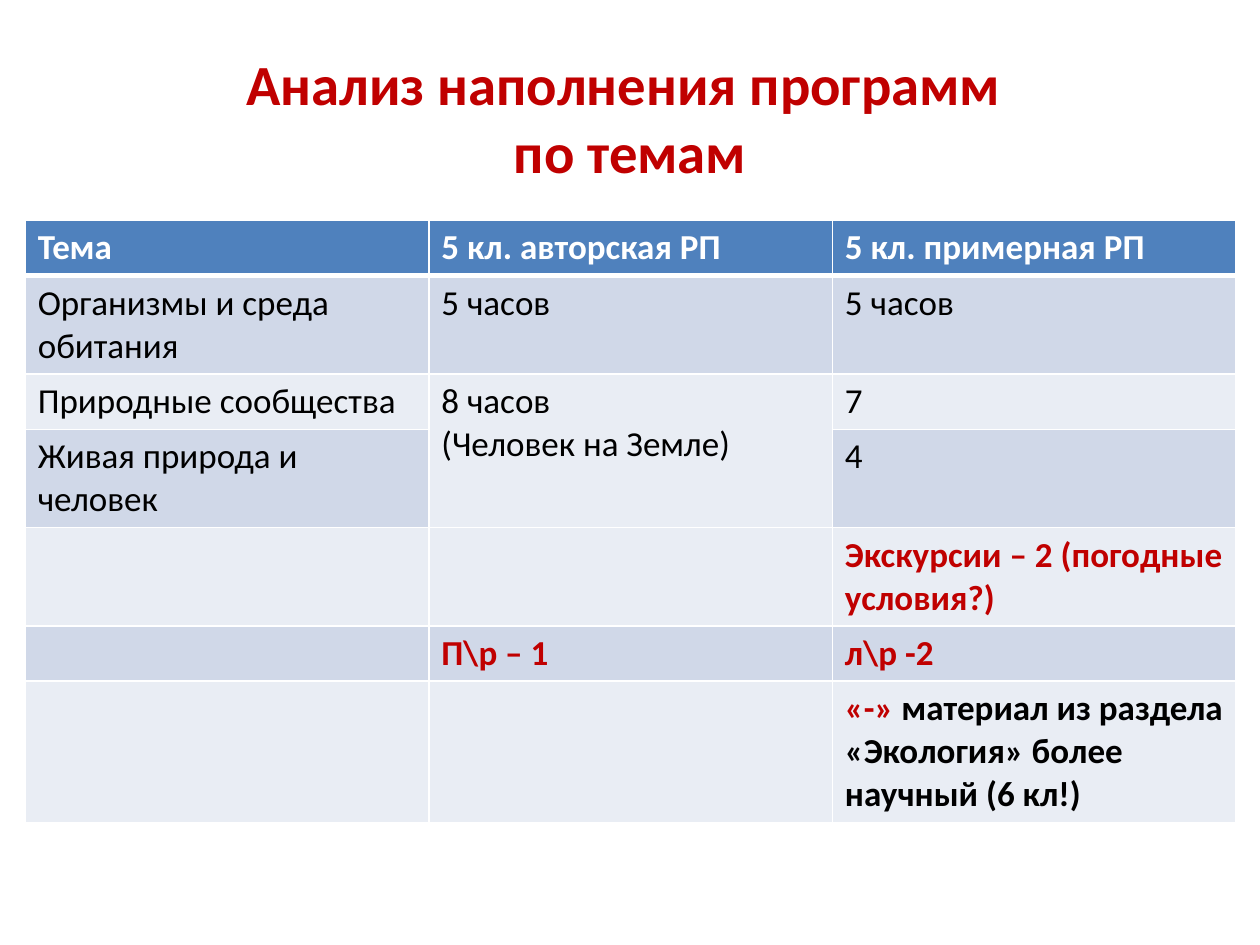
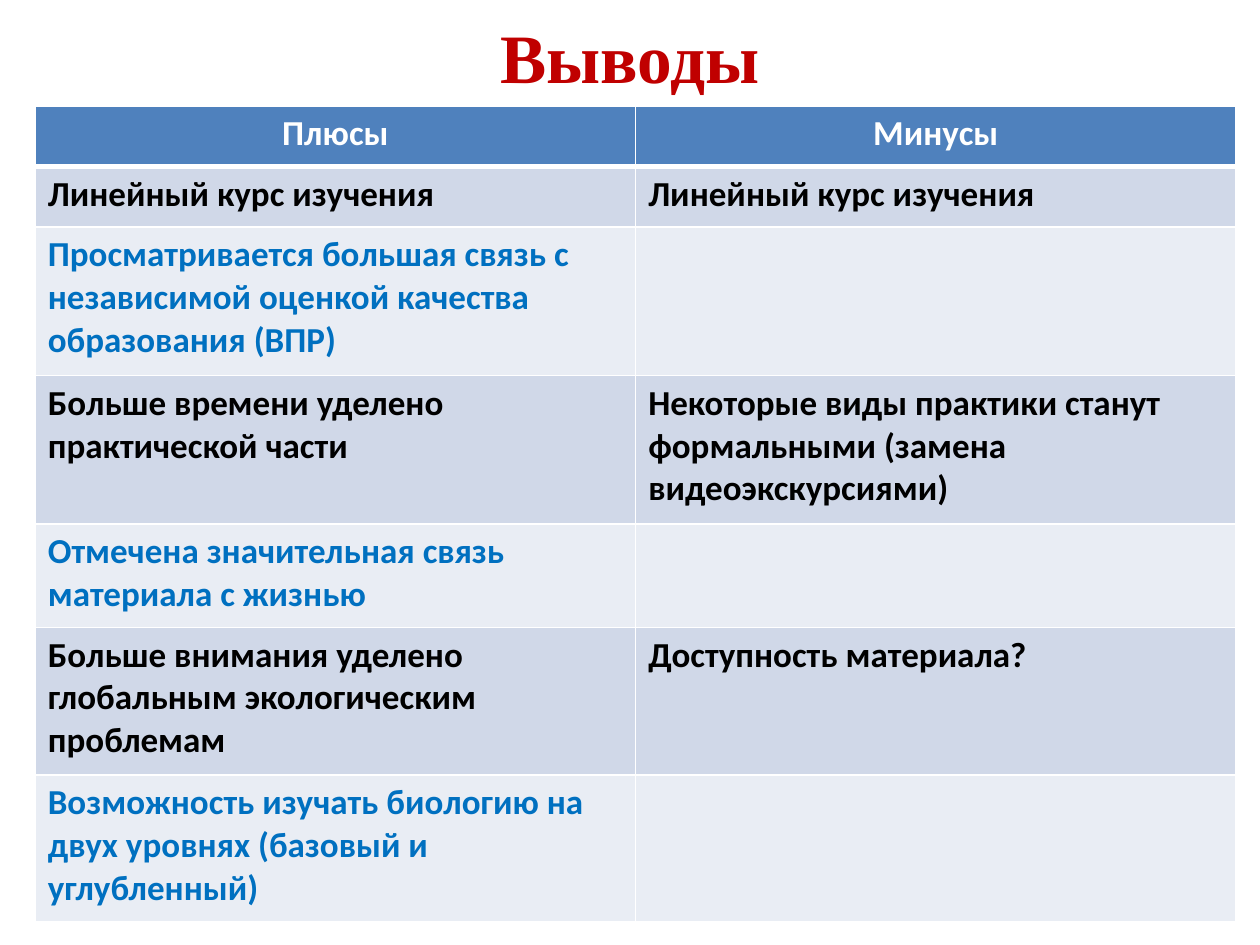
from dataclasses import dataclass

from lxml import etree
from pptx import Presentation
from pptx.dml.color import RGBColor
from pptx.enum.text import MSO_ANCHOR, PP_ALIGN
from pptx.oxml.ns import qn
from pptx.util import Inches, Pt

CENTER = PP_ALIGN.CENTER
LEFT = PP_ALIGN.LEFT
MIDDLE = MSO_ANCHOR.MIDDLE
SIDES = ("L", "R", "T", "B")


@dataclass(frozen=True)
class Theme:
    red: str = "C00000"
    blue: str = "0070C0"
    black: str = "000000"
    white: str = "FFFFFF"
    header: str = "4F81BD"
    bands: tuple = ("D0D8E8", "E9EDF4")
    font: str = "Calibri"
    serif: str = "Times New Roman"
    body: float = 20
    title: float = 32.4
    big_title: float = 39.6
    thin: float = 1
    thick: float = 3


T = Theme()
BOLD = dict(bold=True)
RED = dict(color=T.red, bold=True)
BLUE = dict(color=T.blue, bold=True)
HEAD = dict(color=T.white, bold=True)


def write(tf, text, size=T.body, font=T.font, color=T.black, bold=False, align=LEFT):
    for i, line in enumerate(text.split("\n")):
        p = tf.add_paragraph() if i else tf.paragraphs[-1]
        p.alignment = align
        for j, part in enumerate(line.split("\v")):
            if j:
                p.add_line_break()
            r = p.add_run()
            r.text = part
            r.font.size = Pt(size)
            r.font.name = font
            r.font.bold = bold
            r.font.color.rgb = RGBColor.from_string(color)


class Deck:
    def __init__(self, width, height):
        self.prs = Presentation()
        self.prs.slide_width = Inches(width)
        self.prs.slide_height = Inches(height)
        self.s = None

    def x(self, share):
        return int(self.prs.slide_width * share)

    def y(self, share):
        return int(self.prs.slide_height * share)

    def slide(self):
        self.s = self.prs.slides.add_slide(self.prs.slide_layouts[6])

    def title(self, text, top, height, **fmt):
        sp = self.s.shapes.add_textbox(self.x(0.05), self.y(top), self.x(0.9), self.y(height))
        tf = sp.text_frame
        tf.word_wrap = True
        tf.vertical_anchor = MIDDLE
        write(tf, text, color=T.red, bold=True, align=CENTER, **fmt)

    def borders(self, cell, row):
        pr = cell._tc.get_or_add_tcPr()
        for side in SIDES:
            thick = (row, side) in ((0, "B"), (1, "T"))
            width = Pt(T.thick if thick else T.thin)
            ln = etree.SubElement(pr, qn(f"a:ln{side}"), w=str(int(width)))
            fill = etree.SubElement(ln, qn("a:solidFill"))
            etree.SubElement(fill, qn("a:srgbClr"), val=T.white)

    def table(self, left, top, width, heights, header, rows, header_align=LEFT):
        head = [[(text, dict(HEAD, align=header_align))] for text in header]
        grid = [head] + rows
        frame = self.s.shapes.add_table(len(grid), len(header), self.x(left), self.y(top),
                                        self.x(width), Inches(sum(heights)))
        tbl = frame.table
        tbl.first_row = tbl.horz_banding = False
        for i, row in enumerate(grid):
            tbl.rows[i].height = Inches(heights[i])
            for j, runs in enumerate(row):
                cell = tbl.cell(i, j)
                self.borders(cell, i)
                cell.fill.solid()
                color = T.bands[(i - 1) % 2] if i else T.header
                cell.fill.fore_color.rgb = RGBColor.from_string(color)
                for text, fmt in runs:
                    write(cell.text_frame, text, **fmt)
        return tbl


def cell(text, **fmt):
    return [(text, fmt)]


def topics(deck):
    deck.slide()
    deck.title("Анализ наполнения программ \vпо темам", 0.04, 1 / 6, size=T.title)
    rows = [
        [cell("Организмы и среда обитания"), cell("5 часов"), cell("5 часов")],
        [cell("Природные сообщества"), cell("8 часов\n(Человек на Земле)"), cell("7")],
        [cell("Живая природа и человек"), [], cell("4")],
        [[], [], cell("Экскурсии – 2 (погодные условия?)", **RED)],
        [[], cell("П\\р – 1", **RED), cell("л\\р -2", **RED)],
        [[], [], [("«-» ", RED), ("материал из раздела «Экология» более научный (6 кл!)", BOLD)]],
    ]
    lines = (1, 2, 1, 2, 2, 1, 3)
    heights = [0.1 + 0.34 * n for n in lines]
    tbl = deck.table(0.02, 0.233, 0.961, heights,
                     ("Тема", "5 кл. авторская РП", "5 кл. примерная РП"), rows)
    tbl.cell(2, 1).merge(tbl.cell(3, 1))


def conclusions(deck):
    deck.slide()
    deck.title("Выводы", 0.007, 0.105, size=T.big_title, font=T.serif)
    pairs = [
        ("Линейный курс изучения", "Линейный курс изучения"),
        ("Просматривается большая связь с независимой оценкой качества образования (ВПР)", ""),
        ("Больше времени уделено практической части",
         "Некоторые виды практики станут формальными (замена видеоэкскурсиями)"),
        ("Отмечена значительная связь материала с жизнью", ""),
        ("Больше внимания уделено глобальным экологическим проблемам", "Доступность материала?"),
        ("Возможность изучать биологию на двух уровнях (базовый и углубленный)", ""),
    ]
    rows = [[cell(plus, **(BOLD if minus else BLUE)), cell(minus, **BOLD) if minus else []]
            for plus, minus in pairs]
    heights = (0.48, 0.48, 1.18, 1.18, 0.82, 1.17, 1.17)
    deck.table(0.028, 0.112, 0.953, heights, ("Плюсы", "Минусы"), rows, header_align=CENTER)


def main():
    deck = Deck(10, 7.5)
    topics(deck)
    conclusions(deck)
    deck.prs.save("out.pptx")


if __name__ == "__main__":
    main()
